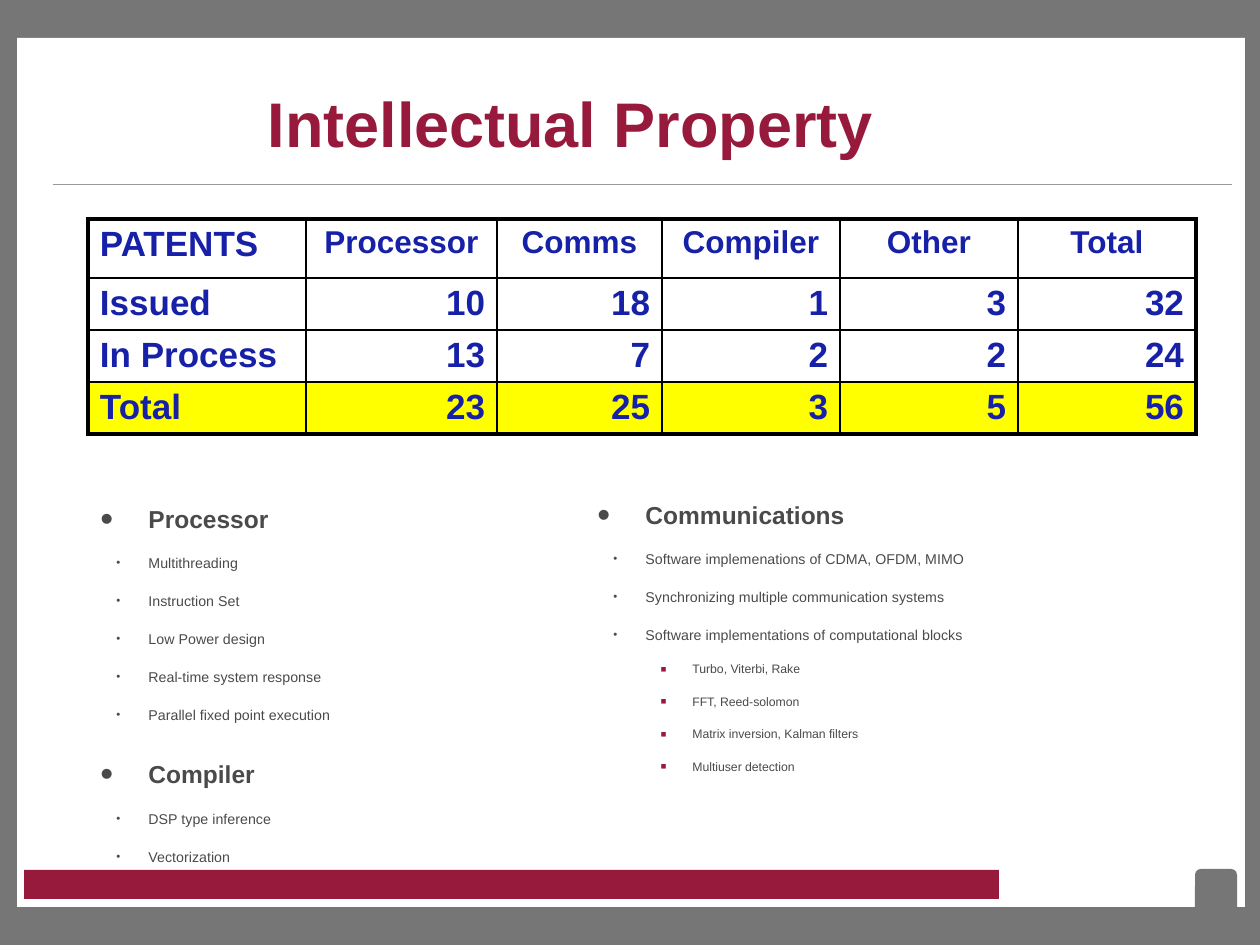
from lxml import etree
from pptx import Presentation
from pptx.dml.color import RGBColor
from pptx.enum.shapes import MSO_CONNECTOR, MSO_SHAPE
from pptx.enum.text import MSO_ANCHOR, PP_ALIGN
from pptx.oxml.ns import qn
from pptx.util import Pt

SCALE = 914400 / 126  # EMU per px
GRAY = RGBColor(0x76, 0x76, 0x76)
RULE = RGBColor(0x99, 0x99, 0x99)
WHITE = RGBColor(0xFF, 0xFF, 0xFF)
CRIMSON = RGBColor(0x97, 0x1A, 0x3C)
BLUE = RGBColor(0x17, 0x21, 0xA8)
YELLOW = RGBColor(0xFF, 0xFF, 0x00)
TEXT = RGBColor(0x4A, 0x4A, 0x4A)


def px(*lengths):
    return [round(length * SCALE) for length in lengths]


def style(font, size, color, bold):
    font.name = "Arial"
    font.size = Pt(size)
    font.bold = bold
    font.color.rgb = color


presentation = Presentation()
presentation.slide_width, presentation.slide_height = px(1260, 945)
slide = presentation.slides.add_slide(presentation.slide_layouts[5])
shapes = slide.shapes

# Frame, page, corner tab and footer bar
for kind, box, color in (
    (MSO_SHAPE.RECTANGLE, (0, 0, 1260, 945), GRAY),
    (MSO_SHAPE.RECTANGLE, (17, 38, 1228, 869), WHITE),
    (MSO_SHAPE.ROUNDED_RECTANGLE, (1195, 869, 42, 48), GRAY),
    (MSO_SHAPE.RECTANGLE, (24, 870, 975, 29), CRIMSON),
):
    shape = shapes.add_shape(kind, *px(*box))
    shape.shadow.inherit = False
    shape.fill.solid()
    shape.fill.fore_color.rgb = color
    shape.line.fill.background()
    if kind == MSO_SHAPE.ROUNDED_RECTANGLE:
        shape.adjustments[0] = 0.14

# Rule under the title
rule = shapes.add_connector(MSO_CONNECTOR.STRAIGHT, *px(53, 184, 1232, 184))
rule.line.color.rgb = RULE
rule.line.width = Pt(0.5)
etree.SubElement(rule._element.spPr, qn("a:effectLst"))

# Title, brought in front of the page
title = shapes.title
shapes._spTree.append(title._element)
title.left, title.top, title.width, title.height = px(39, 65, 1063, 115)
title.text_frame.text = "Intellectual Property"
title.text_frame.vertical_anchor = MSO_ANCHOR.MIDDLE
paragraph = title.text_frame.paragraphs[0]
paragraph.alignment = PP_ALIGN.CENTER
style(paragraph.runs[0].font, 36, CRIMSON, True)

# Patent table
patents = [
    ("PATENTS", "Processor", "Comms", "Compiler", "Other", "Total"),
    ("Issued", "10", "18", "1", "3", "32"),
    ("In Process", "13", "7", "2", "2", "24"),
    ("Total", "23", "25", "3", "5", "56"),
]
column_widths = (218, 191, 165, 178, 178, 178)
row_heights = (59, 52, 52, 52)
last_row, last_column = len(row_heights) - 1, len(column_widths) - 1
table = shapes.add_table(
    len(row_heights), len(column_widths),
    *px(88, 219, sum(column_widths), sum(row_heights))).table
table.first_row = table.horz_banding = False
for column, width in zip(table.columns, px(*column_widths)):
    column.width = width
for row, height in zip(table.rows, px(*row_heights)):
    row.height = height

for i, values in enumerate(patents):
    for j, value in enumerate(values):
        cell = table.cell(i, j)
        cell.margin_left, cell.margin_right = px(12, 12)
        cell.margin_top, cell.margin_bottom = px(6, 5)
        cell.text_frame.text = value
        paragraph = cell.text_frame.paragraphs[0]
        heading = i == 0 and j > 0
        if heading:
            paragraph.alignment = PP_ALIGN.CENTER
        else:
            paragraph.alignment = PP_ALIGN.RIGHT if j else PP_ALIGN.LEFT
        style(paragraph.runs[0].font, 18 if heading else 20, BLUE, True)

        # Thick lines outside, thin lines inside
        properties = cell._tc.get_or_add_tcPr()
        for side, outer in (("L", j == 0), ("R", j == last_column),
                            ("T", i == 0), ("B", i == last_row)):
            border = etree.SubElement(properties, qn("a:ln" + side),
                                      w=str(Pt(2.25 if outer else 1)))
            fill = etree.SubElement(border, qn("a:solidFill"))
            etree.SubElement(fill, qn("a:srgbClr"), val="000000")
        if i == last_row:
            cell.fill.solid()
            cell.fill.fore_color.rgb = YELLOW
        else:
            cell.fill.background()

# Bullet lists: size, bold, space before, left margin, indent,
# bullet, its colour and its size in percent
levels = (
    (14, True, 20.5, 48, -48, "•", TEXT, 150),
    (8.1, False, 12, 48, -32, "•", TEXT, 80),
    (7, False, 10.2, 95, -32, "▪", CRIMSON, 150),
)
lists = (
    ((88, 498, 524, 367), (
        (0, "Processor"),
        (1, "Multithreading"),
        (1, "Instruction Set"),
        (1, "Low Power design"),
        (1, "Real-time system response"),
        (1, "Parallel fixed point execution"),
        (0, "Compiler"),
        (1, "DSP type inference"),
        (1, "Vectorization"),
    )),
    ((585, 494, 524, 359), (
        (0, "Communications"),
        (1, "Software implemenations of CDMA, OFDM, MIMO"),
        (1, "Synchronizing multiple communication systems"),
        (1, "Software implementations of computational blocks"),
        (2, "Turbo, Viterbi, Rake"),
        (2, "FFT, Reed-solomon"),
        (2, "Matrix inversion, Kalman filters"),
        (2, "Multiuser detection"),
    )),
)
for box, items in lists:
    text_frame = shapes.add_textbox(*px(*box)).text_frame
    text_frame.word_wrap = True
    for index, (level, text) in enumerate(items):
        size, bold, space, margin, indent, bullet, color, percent = levels[level]
        paragraph = text_frame.add_paragraph() if index else text_frame.paragraphs[0]
        paragraph.text = text
        paragraph.level = level
        if index:
            paragraph.space_before = Pt(space)
        properties = paragraph._p.get_or_add_pPr()
        for name, value in zip(("marL", "indent"), px(margin, indent)):
            properties.set(name, str(value))
        bullet_color = etree.SubElement(properties, qn("a:buClr"))
        etree.SubElement(bullet_color, qn("a:srgbClr"), val=str(color))
        etree.SubElement(properties, qn("a:buSzPct"), val=str(percent * 1000))
        etree.SubElement(properties, qn("a:buFont"), typeface="Arial")
        etree.SubElement(properties, qn("a:buChar"), char=bullet)
        style(paragraph.runs[0].font, size, TEXT, bold)

presentation.save("out.pptx")
